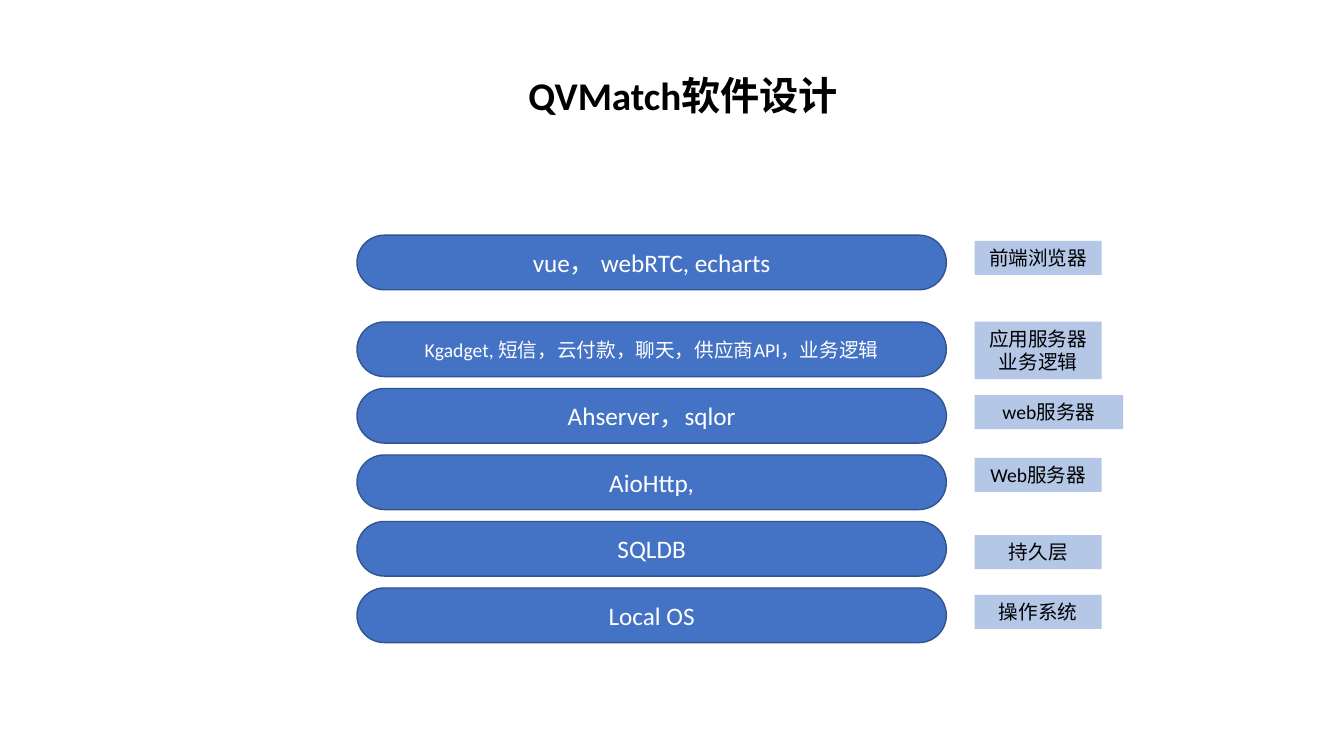
from dataclasses import dataclass

from pptx import Presentation
from pptx.dml.color import RGBColor
from pptx.enum.shapes import MSO_SHAPE as Preset
from pptx.enum.text import MSO_ANCHOR as Anchor, MSO_AUTO_SIZE as AutoSize, PP_ALIGN as Align
from pptx.shapes.autoshape import Shape
from pptx.slide import Slide
from pptx.util import Pt

COLOURS = {
    "bar": "4472C4",
    "bar_line": "325491",
    "label": "B4C7E7",
    "light_text": "FFFFFF",
    "dark_text": "000000",
}
FONT = "Calibri"
BAR_LEFT, BAR_WIDTH, BAR_HEIGHT = 255, 421, 39
LABEL_LEFT, LABEL_LINE_HEIGHT, LABEL_PADDING = 696.25, 16.8, 7.5
FRONT_TOP, STACK_TOP, STACK_PITCH = 168, 230, 47.5


@dataclass
class Layer:
    text: str
    label: str
    label_top: float
    label_width: float = 90.75
    text_size: float = 18


LAYERS = [
    Layer("vue， webRTC, echarts", "前端浏览器", 172),
    Layer("Kgadget, 短信，云付款，聊天，供应商API，业务逻辑", "应用服务器\n业务逻辑", 229.75, text_size=14),
    Layer("Ahserver，sqlor", "web服务器", 282.25, label_width=106),
    Layer("AioHttp,", "Web服务器", 327),
    Layer("SQLDB", "持久层", 382.25),
    Layer("Local OS", "操作系统", 425),
]


def colour(name: str) -> RGBColor:
    return RGBColor.from_string(COLOURS[name])


def place(shape: Shape, left: float, top: float, width: float, height: float) -> None:
    shape.left, shape.top = Pt(left), Pt(top)
    shape.width, shape.height = Pt(width), Pt(height)


def write(shape: Shape, text: str, size: float, colour_name: str,
          anchor: Anchor, auto_size: AutoSize, bold: bool = False) -> None:
    frame = shape.text_frame
    frame.text = text
    frame.word_wrap = True
    frame.vertical_anchor = anchor
    frame.auto_size = auto_size
    for paragraph in frame.paragraphs:
        paragraph.alignment = Align.CENTER
        paragraph.font.name = FONT
        paragraph.font.size = Pt(size)
        paragraph.font.bold = bold
        paragraph.font.color.rgb = colour(colour_name)


def add_block(slide: Slide, preset: Preset, fill: str,
              left: float, top: float, width: float, height: float) -> Shape:
    shape = slide.shapes.add_shape(preset, Pt(left), Pt(top), Pt(width), Pt(height))
    shape.shadow.inherit = False
    shape.fill.solid()
    shape.fill.fore_color.rgb = colour(fill)
    return shape


def add_bar(slide: Slide, layer: Layer, top: float) -> None:
    bar = add_block(slide, Preset.ROUNDED_RECTANGLE, "bar", BAR_LEFT, top, BAR_WIDTH, BAR_HEIGHT)
    bar.adjustments[0] = 0.5
    bar.line.color.rgb = colour("bar_line")
    bar.line.width = Pt(1)
    write(bar, layer.text, layer.text_size, "light_text", Anchor.MIDDLE, AutoSize.NONE)


def add_label(slide: Slide, layer: Layer) -> None:
    height = LABEL_PADDING + LABEL_LINE_HEIGHT * len(layer.label.splitlines())
    label = add_block(slide, Preset.RECTANGLE, "label",
                      LABEL_LEFT, layer.label_top, layer.label_width, height)
    label.line.fill.background()
    write(label, layer.label, 14, "dark_text", Anchor.TOP, AutoSize.SHAPE_TO_FIT_TEXT)


def main() -> None:
    presentation = Presentation()
    presentation.slide_width, presentation.slide_height = Pt(960), Pt(540)
    slide = presentation.slides.add_slide(presentation.slide_layouts.get_by_name("Title Only"))

    title = slide.shapes.title
    place(title, 345, 47.5, 286, 41)
    write(title, "QVMatch软件设计", 28, "dark_text", Anchor.TOP, AutoSize.NONE, bold=True)

    for index, layer in enumerate(LAYERS):
        top = STACK_TOP + STACK_PITCH * (index - 1) if index else FRONT_TOP
        add_bar(slide, layer, top)
        add_label(slide, layer)

    presentation.save("out.pptx")


if __name__ == "__main__":
    main()
